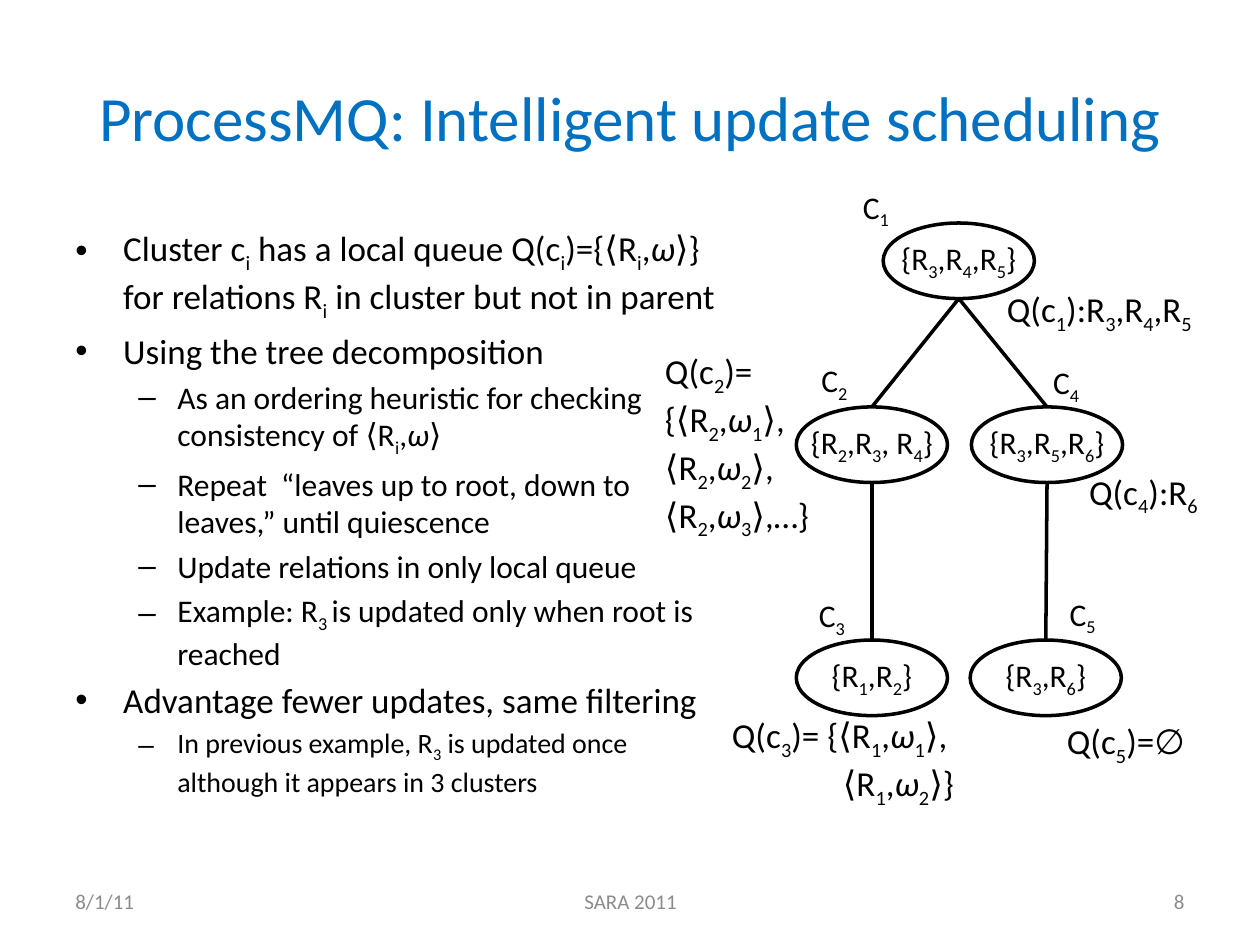
from itertools import groupby

from pptx import Presentation
from pptx import util as u
from pptx.dml.color import RGBColor
from pptx.enum import shapes, text
from pptx.oxml.ns import qn

Inches = u.Inches
BLACK, BLUE, GREY = "000000", "0070C0", "8C8C8C"
LEFT, CENTER, RIGHT = text.PP_ALIGN.LEFT, text.PP_ALIGN.CENTER, text.PP_ALIGN.RIGHT
TOP, MIDDLE = text.MSO_ANCHOR.TOP, text.MSO_ANCHOR.MIDDLE
NODE_SIZE = (1.2, 0.6)

BULLETS = [
    (0, 20, "Cluster c_i has a local queue Q(c_i)={⟨R_i,ω⟩} "
            "for relations R_i in cluster but not in parent"),
    (0, 20, "Using the tree decomposition"),
    (1, 18, "As an ordering heuristic for checking consistency of ⟨R_i,ω⟩"),
    (1, 18, "Repeat  “leaves up to root, down to leaves,” until quiescence"),
    (1, 18, "Update relations in only local queue"),
    (1, 18, "Example: R_3_ is updated only when root is reached"),
    (0, 20, "Advantage fewer updates, same filtering"),
    (1, 16, "In previous example, R_3 is updated once although it appears in 3 clusters"),
]
BULLET_STYLES = [("•", 0.38, 0.38), ("–", 0.81, 0.31)]

CLUSTERS = {
    "C_1": ((7.01, 1.77), "{R_3,R_4,R_5}", (6.75, 1.44)),
    "C_2": ((6.32, 3.23), "{R_2,R_3, R_4}", (6.42, 2.82)),
    "C_3": ((6.32, 5.08), "{R_1,R_2}", (6.4, 4.68)),
    "C_4": ((7.71, 3.23), "{R_3,R_5,R_6}", (8.26, 2.83)),
    "C_5": ((7.7, 5.08), "{R_3,R_6}", (8.39, 4.67)),
}
EDGES = [("C_1", "C_2"), ("C_1", "C_4"), ("C_2", "C_3"), ("C_4", "C_5")]
QUEUES = [
    ((5.27, 2.86, 1.16, 1.35), ["Q(c_2)= {⟨R_2,ω_1⟩, ⟨R_2,ω_2⟩, ⟨R_2,ω_3⟩,…}"]),
    ((5.7, 5.71, 1.98, 0.67), ["Q(c_3)= {⟨R_1,ω_1⟩,", "⟨R_1,ω_2⟩}"]),
    ((7.84, 2.3, 1.77, 0.34), ["Q(c_1):R_3,R_4,R_5"]),
    ((8.58, 3.75, 0.99, 0.34), ["Q(c_4):R_6"]),
    ((8.44, 5.73, 0.99, 0.34), ["Q(c_5)=∅"]),
]


def color(value):
    """Turn a hex string into a colour."""
    return RGBColor.from_string(value)


def styled_letters(markup):
    """Yield each letter with its style; an underscore lowers the next letter."""
    lowered = False
    for letter in markup:
        if letter == "_":
            lowered = True
            continue
        yield letter, (lowered, letter == "ω")
        lowered = False


def write(para, markup, size, tint=BLACK, align=LEFT):
    """Fill a paragraph with plain, lowered and italic spans."""
    para.alignment = align
    for (lowered, italic), letters in groupby(styled_letters(markup), lambda pair: pair[1]):
        span = para.add_run()
        span.text = "".join(letter for letter, _ in letters)
        span.font.name, span.font.size = "Calibri", u.Pt(size)
        span.font.color.rgb = color(tint)
        if italic:
            span.font.italic = True
        if lowered:
            span.font._element.set("baseline", "-25000")


def indent(para, margin, hanging=0):
    """Set the left margin and hanging indent of a paragraph."""
    properties = para._p.get_or_add_pPr()
    properties.set("marL", str(Inches(margin)))
    properties.set("indent", str(-Inches(hanging)))
    return properties


def clear_margins(frame):
    """Remove the insets of a text frame."""
    frame.margin_left = frame.margin_right = frame.margin_top = frame.margin_bottom = 0


def add_text(page, box, lines, size, tint=BLACK, align=LEFT, anchor=TOP):
    """Place a wrapping text box and return its frame."""
    frame = page.shapes.add_textbox(*map(Inches, box)).text_frame
    frame.word_wrap = True
    frame.vertical_anchor = anchor
    for number, line in enumerate(lines):
        para = frame.add_paragraph() if number else frame.paragraphs[0]
        write(para, line, size, tint, align)
    return frame


def add_bullets(page, box):
    """Place the two-level bullet list."""
    frame = add_text(page, box, [], 20)
    for number, (level, size, line) in enumerate(BULLETS):
        para = frame.add_paragraph() if number else frame.paragraphs[0]
        write(para, line, size)
        para.level = level
        para.space_before = u.Pt(size * 0.2)
        mark, margin, hanging = BULLET_STYLES[level]
        properties = indent(para, margin, hanging)
        font = properties.makeelement(qn("a:buFont"), {"typeface": "Arial"})
        bullet = properties.makeelement(qn("a:buChar"), {"char": mark})
        properties.extend([font, bullet])


def add_cluster(page, box, relations):
    """Place one outlined ellipse of the tree."""
    node = page.shapes.add_shape(shapes.MSO_SHAPE.OVAL, *map(Inches, box))
    node.shadow.inherit = False
    node.fill.background()
    node.line.color.rgb, node.line.width = color(BLACK), u.Pt(2)
    frame = node.text_frame
    frame.word_wrap = False
    frame.vertical_anchor = MIDDLE
    clear_margins(frame)
    write(frame.paragraphs[0], relations, 18, align=CENTER)
    return node


def add_edge(page, parent, child):
    """Join the bottom of a parent to the top of its child."""
    edge = page.shapes.add_connector(
        shapes.MSO_CONNECTOR.STRAIGHT,
        parent.left + parent.width // 2, parent.top + parent.height,
        child.left + child.width // 2, child.top)
    edge.line.color.rgb, edge.line.width = color(BLACK), u.Pt(2)
    properties = edge._element.spPr
    properties.append(properties.makeelement(qn("a:effectLst"), {}))


def add_queue(page, box, lines):
    """Place a queue label as a block centred in its box."""
    frame = add_text(page, box, lines, 20, anchor=MIDDLE)
    clear_margins(frame)
    frame._txBody.bodyPr.set("anchorCtr", "1")
    for para in frame.paragraphs[1:]:
        indent(para, 0.88)


def add_tree(page):
    """Place the clusters, edges and queue labels of the tree."""
    nodes = {name: add_cluster(page, place + NODE_SIZE, relations)
             for name, (place, relations, _) in CLUSTERS.items()}
    for parent, child in EDGES:
        add_edge(page, nodes[parent], nodes[child])
    for name, (_, _, place) in CLUSTERS.items():
        add_text(page, place + (0.49, 0.4), [name], 18)
    for box, lines in QUEUES:
        add_queue(page, box, lines)


def add_footer(page, top, height):
    """Place the date, event and page number."""
    for left, width, line, align in [(0.5, 2.33, "8/1/11", LEFT),
                                     (3.42, 3.17, "SARA 2011", CENTER),
                                     (7.17, 2.33, "8", RIGHT)]:
        add_text(page, (left, top, width, height), [line], 12, GREY, align, MIDDLE)


def main():
    """Build and save the deck."""
    deck = Presentation()
    deck.slide_width, deck.slide_height = Inches(10), Inches(7.5)
    page = deck.slides.add_slide(deck.slide_layouts[6])
    add_text(page, (0.5, 0.3, 9, 1.25), ["ProcessMQ: Intelligent update scheduling"],
             36, BLUE, CENTER, MIDDLE)
    add_bullets(page, (0.5, 1.75, 5.4, 4.95))
    add_footer(page, 6.95, 0.4)
    add_tree(page)
    deck.save("out.pptx")


if __name__ == "__main__":
    main()
